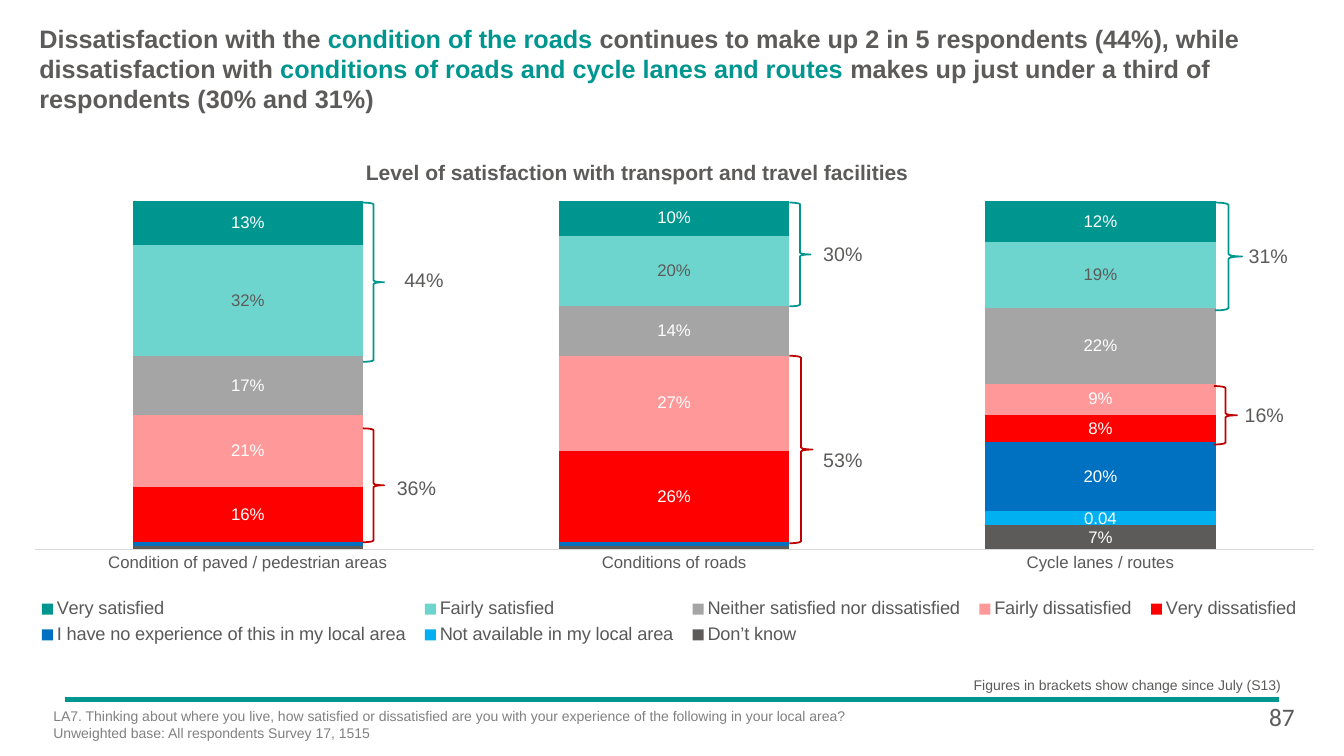
from pptx import Presentation
from pptx.chart.data import CategoryChartData
from pptx.dml.color import RGBColor
from pptx.enum import chart as ch, shapes, text
from pptx.oxml import parse_xml
from pptx.oxml.ns import nsdecls
from pptx.util import Inches, Pt

TEAL = RGBColor(0x00, 0x96, 0x90)
AQUA = RGBColor(0x6D, 0xD5, 0xCE)
GREY = RGBColor(0xA5, 0xA5, 0xA5)
PINK = RGBColor(0xFF, 0x99, 0x99)
RED = RGBColor(0xFF, 0x00, 0x00)
DARK_RED = RGBColor(0xC0, 0x00, 0x00)
BLUE = RGBColor(0x00, 0x70, 0xC0)
SKY = RGBColor(0x00, 0xB0, 0xF0)
INK = RGBColor(0x5C, 0x5B, 0x5A)
AXIS_TEXT = RGBColor(0x59, 0x59, 0x59)
AXIS_LINE = RGBColor(0xD9, 0xD9, 0xD9)
NOTE = RGBColor(0x80, 0x80, 0x80)
WHITE = RGBColor(0xFF, 0xFF, 0xFF)


def style(font, size, color, bold=False, face="Arial"):
    font.name, font.size, font.bold = face, Pt(size), bold
    font.color.rgb = color


def add_text(words, left, top, width, height, size=14, color=INK, bold=False,
             face="Arial", align=text.PP_ALIGN.LEFT, wrap=True, inset=None):
    """Add a text box; each line of words becomes a paragraph."""
    box = page.shapes.add_textbox(Inches(left), Inches(top), Inches(width), Inches(height))
    frame = box.text_frame
    frame.word_wrap = wrap
    if inset is not None:
        frame.margin_left = frame.margin_right = Inches(inset)
        frame.margin_top = frame.margin_bottom = Inches(inset)
    frame.text = words
    for para in frame.paragraphs:
        para.alignment = align
        style(para.runs[0].font, size, color, bold, face)


deck = Presentation()
deck.slide_width, deck.slide_height = Inches(13.33), Inches(7.5)
page = deck.slides.add_slide(deck.slide_layouts[5])

# Title
title = page.shapes.title
title.left, title.top = Inches(0.29), Inches(0.18)
title.width, title.height = Inches(12.97), Inches(1.01)
title.text_frame.auto_size = text.MSO_AUTO_SIZE.NONE
title.text_frame.vertical_anchor = text.MSO_ANCHOR.TOP
para = title.text_frame.paragraphs[0]
para.alignment = text.PP_ALIGN.LEFT
for words, color in [
    ("Dissatisfaction with the ", INK),
    ("condition of the roads ", TEAL),
    ("continues to make up 2 in 5 respondents (44%), while dissatisfaction with ", INK),
    ("conditions of roads and cycle lanes and routes ", TEAL),
    ("makes up just under a third of respondents (30% and 31%)", INK),
]:
    span = para.add_run()
    span.text = words
    style(span.font, 18, color, bold=True)

# Footer rule
rule = page.shapes.add_connector(shapes.MSO_CONNECTOR.STRAIGHT, Inches(0.64), Inches(6.94),
                                 Inches(12.69), Inches(6.94))
rule.line.color.rgb, rule.line.width = TEAL, Pt(3)
rule._element.spPr.append(parse_xml(f"<a:effectLst {nsdecls('a')}/>"))

add_text("Level of satisfaction with transport and travel facilities",
         3.53, 1.53, 5.65, 0.35, size=15, bold=True, wrap=False)

# Stacked chart: name, values, fill, label colour, label format
answers = [
    ("Don’t know", (0.01, 0.01, 0.07), INK, WHITE, "0%"),
    ("Not available in my local area", (None, None, 0.04), SKY, WHITE, "General"),
    ("I have no experience of this in my local area", (0.01, 0.01, 0.2), BLUE, WHITE, "0%"),
    ("Very dissatisfied", (0.16, 0.26, 0.08), RED, WHITE, "0%"),
    ("Fairly dissatisfied", (0.21, 0.27, 0.09), PINK, WHITE, "0%"),
    ("Neither satisfied nor dissatisfied", (0.17, 0.14, 0.22), GREY, WHITE, "0%"),
    ("Fairly satisfied", (0.32, 0.2, 0.19), AQUA, INK, "0%"),
    ("Very satisfied", (0.13, 0.1, 0.12), TEAL, WHITE, "0%"),
]
data = CategoryChartData()
data.categories = ["Condition of paved / pedestrian areas", "Conditions of roads",
                   "Cycle lanes / routes"]
for name, values, *_ in answers:
    data.add_series(name, values)
chart = page.shapes.add_chart(ch.XL_CHART_TYPE.COLUMN_STACKED_100, Inches(0.15), Inches(1.82),
                              Inches(12.97), Inches(5.15), data).chart
chart.has_title = False
chart.font.name, chart.font.size = "Arial", Pt(10)
plot = chart.plots[0]
plot.gap_width, plot.overlap, plot.vary_by_categories = 85, 100, False

for series, (_, values, fill, label_color, number_format) in zip(plot.series, answers):
    series.format.fill.solid()
    series.format.fill.fore_color.rgb = fill
    labels = series.data_labels
    labels.show_value = True
    labels.position = ch.XL_LABEL_POSITION.CENTER
    labels.number_format, labels.number_format_is_linked = number_format, False
    style(labels.font, 12, label_color)
    tiny = [index for index, value in enumerate(values) if value == 0.01]
    for place, index in enumerate(tiny):
        labels._element.insert(place, parse_xml(
            f'<c:dLbl {nsdecls("c")}><c:idx val="{index}"/><c:delete val="1"/></c:dLbl>'))

chart.value_axis.visible = False
chart.value_axis.has_major_gridlines = False
chart.value_axis.maximum_scale = 1
axis = chart.category_axis
axis.major_tick_mark = ch.XL_TICK_MARK.NONE
axis.format.line.color.rgb, axis.format.line.width = AXIS_LINE, Pt(0.75)
style(axis.tick_labels.font, 12, AXIS_TEXT)

chart.has_legend = True
legend = chart.legend
legend.position = ch.XL_LEGEND_POSITION.RIGHT
legend.include_in_layout = False
style(legend.font, 13, AXIS_TEXT)

plot_area = chart._chartSpace.chart.plotArea
for old in plot_area.findall("{*}layout"):
    plot_area.remove(old)
for parent, place, target, (x, y, w, h) in [
    (plot_area, 0, '<c:layoutTarget val="inner"/>', (0.015, 0.033, 0.978, 0.672)),
    (legend._element, 1, "", (0.01, 0.79, 0.98, 0.11)),
]:
    parent.insert(place, parse_xml(
        f'<c:layout {nsdecls("c")}><c:manualLayout>{target}'
        f'<c:xMode val="edge"/><c:yMode val="edge"/><c:x val="{x}"/><c:y val="{y}"/>'
        f'<c:w val="{w}"/><c:h val="{h}"/></c:manualLayout></c:layout>'))

# Braces with their totals: brace box, colour, total, total box
for brace_box, color, total, total_box in [
    ((3.6, 2.01, 0.21, 1.58), TEAL, "44%", (3.77, 2.61, 0.87, 0.34)),
    ((3.6, 4.25, 0.21, 1.13), DARK_RED, "36%", (3.62, 4.67, 1.02, 0.34)),
    ((7.83, 2.01, 0.21, 1.03), TEAL, "30%", (7.91, 2.35, 0.9, 0.34)),
    ((7.83, 3.53, 0.23, 1.86), DARK_RED, "53%", (7.85, 4.39, 1.02, 0.34)),
    ((12.05, 2.01, 0.27, 1.07), TEAL, "31%", (12.18, 2.37, 0.8, 0.34)),
    ((12.04, 3.83, 0.23, 0.58), DARK_RED, "16%", (12.05, 3.95, 0.98, 0.34)),
]:
    brace = page.shapes.add_shape(shapes.MSO_SHAPE.RIGHT_BRACE, *map(Inches, brace_box))
    brace.shadow.inherit = False
    brace.fill.background()
    brace.line.color.rgb, brace.line.width = color, Pt(1.25)
    add_text(total, *total_box, align=text.PP_ALIGN.CENTER)

# Footer
add_text("LA7. Thinking about where you live, how satisfied or dissatisfied are you with your "
         "experience of the following in your local area?\n"
         "Unweighted base: All respondents Survey 17, 1515",
         0.43, 6.97, 11.98, 0.56, size=10, color=NOTE)
add_text("87", 12.49, 6.91, 0.67, 0.4, size=18, face="Calibri")
add_text("Figures in brackets show change since July (S13)", 9.46, 6.71, 3.44, 0.17,
         size=10, align=text.PP_ALIGN.CENTER, inset=0)

deck.save("out.pptx")
